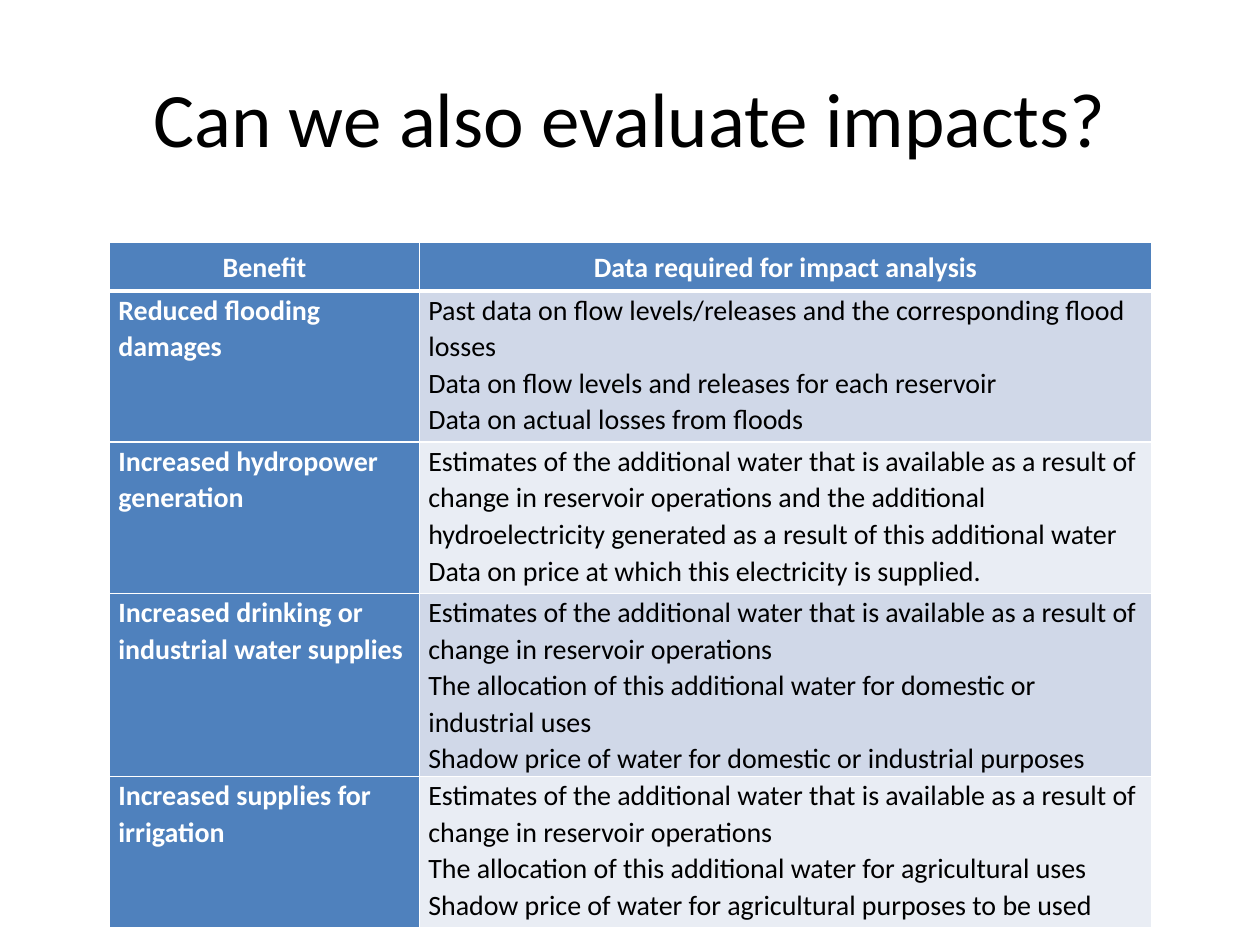
from lxml import etree
from pptx import Presentation
from pptx import util as u
from pptx.dml.color import RGBColor
from pptx.enum import text
from pptx.oxml import ns

COLORS = {
    "ink": "000000",
    "paper": "FFFFFF",
    "heading": "4F81BD",
    "odd_band": "D0D8E8",
    "even_band": "E9EDF4",
}
FONT = "Calibri"
COLUMN_WIDTHS = (2.46, 5.81)
HEADER_HEIGHT, BENEFIT_HEIGHT = 0.39, 1.2

EXTRA_WATER = ("Estimates of the additional water that is available as a result of "
               "change in reservoir operations")
HEADINGS = ("Benefit", "Data required for impact analysis")
BENEFITS = [
    ("Reduced flooding damages", [
        "Past data on flow levels/releases and the corresponding flood losses",
        "Data on flow levels and releases for each reservoir",
        "Data on actual losses from floods",
    ]),
    ("Increased hydropower generation", [
        EXTRA_WATER + " and the additional hydroelectricity generated as a result "
        "of this additional water",
        "Data on price at which this electricity is supplied.",
    ]),
    ("Increased drinking or industrial water supplies", [
        EXTRA_WATER,
        "The allocation of this additional water for domestic or industrial uses",
        "Shadow price of water for domestic or industrial purposes",
    ]),
    ("Increased supplies for irrigation", [
        EXTRA_WATER,
        "The allocation of this additional water for agricultural uses",
        "Shadow price of water for agricultural purposes to be used",
    ]),
]


def rgb(name):
    return RGBColor.from_string(COLORS[name])


def format_text(frame, size, color, bold=False, align=text.PP_ALIGN.LEFT, spacing=None):
    for paragraph in frame.paragraphs:
        paragraph.alignment = align
        paragraph.line_spacing = spacing
        for run in paragraph.runs:
            run.font.name = FONT
            run.font.size = u.Pt(size)
            run.font.bold = bold
            run.font.color.rgb = rgb(color)


def set_borders(cell, top=1, bottom=1):
    """Draw white cell borders; widths are in points."""
    properties = cell._tc.get_or_add_tcPr()
    for side, width in (("L", 1), ("R", 1), ("T", top), ("B", bottom)):
        border = etree.SubElement(properties, ns.qn(f"a:ln{side}"), w=str(u.Pt(width)))
        fill = etree.SubElement(border, ns.qn("a:solidFill"))
        etree.SubElement(fill, ns.qn("a:srgbClr"), val=COLORS["paper"])


def fill_cell(cell, wording, fill, color, bold, header=False, top=1):
    set_borders(cell, top=top, bottom=3 if header else 1)
    cell.fill.solid()
    cell.fill.fore_color.rgb = rgb(fill)
    cell.margin_left = cell.margin_right = u.Inches(0.07)
    cell.margin_top = cell.margin_bottom = 0
    cell.vertical_anchor = text.MSO_ANCHOR.MIDDLE if header else text.MSO_ANCHOR.TOP
    cell.text_frame.text = wording
    align = text.PP_ALIGN.CENTER if header else text.PP_ALIGN.LEFT
    format_text(cell.text_frame, 16, color, bold, align, spacing=1.07)


def add_title(slide, wording):
    title = slide.shapes.title
    title.left, title.top = u.Inches(0.5), u.Inches(0.3)
    title.width, title.height = u.Inches(9), u.Inches(1.25)
    title.text_frame.text = wording
    title.text_frame.vertical_anchor = text.MSO_ANCHOR.MIDDLE
    format_text(title.text_frame, 44, "ink", align=text.PP_ALIGN.CENTER)


def add_benefit_table(slide):
    heights = [HEADER_HEIGHT] + [BENEFIT_HEIGHT] * len(BENEFITS)
    table = slide.shapes.add_table(
        len(heights), len(COLUMN_WIDTHS), u.Inches(0.87), u.Inches(1.92),
        u.Inches(sum(COLUMN_WIDTHS)), u.Inches(sum(heights))).table
    for column, width in zip(table.columns, COLUMN_WIDTHS):
        column.width = u.Inches(width)
    for row, height in zip(table.rows, heights):
        row.height = u.Inches(height)

    # Header row
    for index, heading in enumerate(HEADINGS):
        fill_cell(table.cell(0, index), heading, "heading", "paper", True, header=True)

    # One row per benefit, in alternating bands
    for index, (benefit, data_needs) in enumerate(BENEFITS, start=1):
        band = "odd_band" if index % 2 else "even_band"
        top = 3 if index == 1 else 1
        fill_cell(table.cell(index, 0), benefit, "heading", "paper", True, top=top)
        fill_cell(table.cell(index, 1), "\n".join(data_needs), band, "ink", False, top=top)


def main():
    deck = Presentation()
    deck.slide_width, deck.slide_height = u.Inches(10), u.Inches(7.5)
    slide = deck.slides.add_slide(deck.slide_layouts[5])
    add_title(slide, "Can we also evaluate impacts?")
    add_benefit_table(slide)
    deck.save("out.pptx")


if __name__ == "__main__":
    main()
